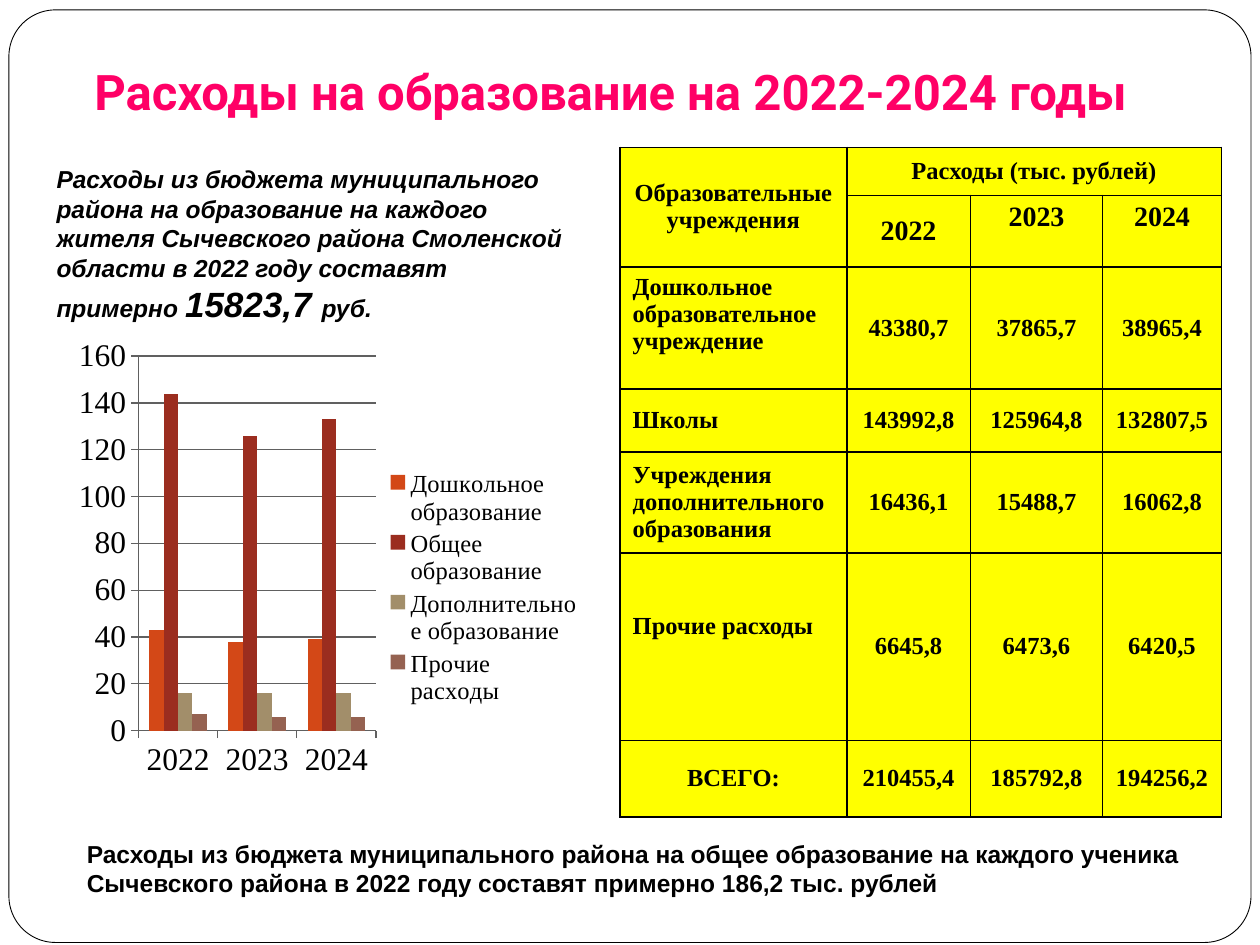
from lxml import etree
from pptx import Presentation
from pptx.chart.data import CategoryChartData
from pptx.dml.color import RGBColor
from pptx.enum import chart as ch, shapes, text
from pptx.oxml import parse_xml
from pptx.oxml.ns import nsdecls, qn
from pptx.util import Cm, Pt

BLACK = RGBColor(0, 0, 0)
WHITE = RGBColor(0xFF, 0xFF, 0xFF)
PINK = RGBColor(0xFF, 0, 0x66)
YELLOW = RGBColor(0xFF, 0xFF, 0)
GRAY = RGBColor(0x60, 0x60, 0x60)
SERIES_COLORS = [RGBColor(0xD3, 0x48, 0x17), RGBColor(0x9B, 0x2D, 0x1F),
                 RGBColor(0xA2, 0x8E, 0x6A), RGBColor(0x95, 0x62, 0x51)]
SERIF = "Times New Roman"
YEARS = ["2022", "2023", "2024"]


def add_text(box, anchor, font_name, color, runs, italic=False):
    """Add a bold one-paragraph text box; runs are (wording, size) pairs."""
    frame = slide.shapes.add_textbox(*(Cm(length) for length in box)).text_frame
    frame.word_wrap = True
    frame.vertical_anchor = anchor
    paragraph = frame.paragraphs[0]
    for wording, size in runs:
        run = paragraph.add_run()
        run.text = wording
        run.font.name, run.font.size = font_name, Pt(size)
        run.font.bold, run.font.italic = True, italic
        run.font.color.rgb = color
    return frame


def set_layout(parent, position, inner, x, y, w, h):
    """Place a chart part by hand, in fractions of the chart area."""
    for old in parent.findall(qn("c:layout")):
        parent.remove(old)
    target = '<c:layoutTarget val="inner"/>' if inner else ""
    parent.insert(position, parse_xml(
        f'<c:layout {nsdecls("c")}><c:manualLayout>{target}'
        '<c:xMode val="edge"/><c:yMode val="edge"/>'
        f'<c:x val="{x}"/><c:y val="{y}"/><c:w val="{w}"/><c:h val="{h}"/>'
        '</c:manualLayout></c:layout>'))


prs = Presentation()
prs.slide_width, prs.slide_height = Cm(25.4), Cm(19.05)
slide = prs.slides.add_slide(prs.slide_layouts[6])

# Frame around the slide
frame = slide.shapes.add_shape(shapes.MSO_SHAPE.ROUNDED_RECTANGLE,
                               Cm(0.18), Cm(0.2), Cm(25.04), Cm(18.8))
frame.adjustments[0] = 0.05
frame.shadow.inherit = False
frame.fill.solid()
frame.fill.fore_color.rgb = WHITE
frame.line.color.rgb = BLACK
frame.line.width = Pt(0.5)

# Title
title = add_text((0, 0.71, 24.61, 1.96), text.MSO_ANCHOR.BOTTOM, "Roboto", PINK,
                 [("Расходы на образование на 2022-2024 годы", 28)])
title.margin_bottom = Cm(0.25)
title.paragraphs[0].alignment = text.PP_ALIGN.CENTER

# Expenditure table
rows = [
    ["Образовательные учреждения", "Расходы (тыс. рублей)", "", ""],
    ["", *YEARS],
    ["Дошкольное образовательное учреждение", "43380,7", "37865,7", "38965,4"],
    ["Школы", "143992,8", "125964,8", "132807,5"],
    ["Учреждения\nдополнительного\nобразования", "16436,1", "15488,7", "16062,8"],
    ["Прочие расходы", "6645,8", "6473,6", "6420,5"],
    ["ВСЕГО:", "210455,4", "185792,8", "194256,2"],
]
column_widths = [4.57, 2.49, 2.67, 2.39]
row_heights = [0.97, 1.35, 2.46, 1.27, 1.89, 3.78, 1.54]
top_anchored = {(1, 2), (1, 3), (2, 0), (5, 0)}

table = slide.shapes.add_table(len(rows), len(column_widths), Cm(12.5), Cm(2.97),
                               Cm(sum(column_widths)), Cm(sum(row_heights))).table
for column, width in zip(table.columns, column_widths):
    column.width = Cm(width)
for row, height in zip(table.rows, row_heights):
    row.height = Cm(height)
table.cell(0, 0).merge(table.cell(1, 0))
table.cell(0, 1).merge(table.cell(0, 3))

for r, row in enumerate(rows):
    for c, wording in enumerate(row):
        cell = table.cell(r, c)
        properties = cell._tc.get_or_add_tcPr()
        for side in ("lnL", "lnR", "lnT", "lnB"):
            border = etree.SubElement(properties, qn(f"a:{side}"), w=str(Pt(1)))
            fill = etree.SubElement(border, qn("a:solidFill"))
            etree.SubElement(fill, qn("a:srgbClr"), val=str(BLACK))
        cell.fill.solid()
        cell.fill.fore_color.rgb = YELLOW
        cell.vertical_anchor = (text.MSO_ANCHOR.TOP if (r, c) in top_anchored
                                else text.MSO_ANCHOR.MIDDLE)
        if c:
            cell.margin_left = cell.margin_right = Cm(0.1)
        if not wording:
            continue
        cell.text_frame.text = wording
        is_label = c == 0 and 2 <= r <= 5
        for paragraph in cell.text_frame.paragraphs:
            paragraph.alignment = (text.PP_ALIGN.LEFT if is_label
                                   else text.PP_ALIGN.CENTER)
            font = paragraph.runs[0].font
            font.name, font.bold = SERIF, True
            font.size = Pt(16 if r == 1 else 14)
            font.color.rgb = BLACK
table.cell(5, 0).margin_top = Cm(1.2)

# Notes on spending per resident and per pupil
add_text((0.89, 3.12, 10.8, 3.61), text.MSO_ANCHOR.MIDDLE, "Arial", BLACK,
         [("Расходы из бюджета муниципального района на образование на каждого "
           "жителя Сычевского района Смоленской области в 2022 году составят "
           "примерно ", 14), ("15823,7 ", 20), ("руб.", 14)], italic=True)
add_text((1.5, 16.92, 22.86, 1.17), text.MSO_ANCHOR.MIDDLE, "Arial", BLACK,
         [("Расходы из бюджета муниципального района на общее образование на "
           "каждого ученика Сычевского района в 2022 году составят примерно "
           "186,2 тыс. рублей", 14)])

# Chart of spending by year
spending = CategoryChartData()
spending.categories = YEARS
spending.add_series("Дошкольное образование", [43, 38, 39])
spending.add_series("Общее образование", [144, 126, 133])
spending.add_series("Дополнительное образование", [16, 16, 16])
spending.add_series("Прочие расходы", [7, 6, 6])
chart = slide.shapes.add_chart(ch.XL_CHART_TYPE.COLUMN_CLUSTERED, Cm(0.79), Cm(6.55),
                               Cm(11.13), Cm(10.49), spending).chart
chart.has_title = False
chart.font.name, chart.font.size = SERIF, Pt(18)
chart.font.color.rgb = BLACK

plot = chart.plots[0]
plot.vary_by_categories = False
plot.gap_width, plot.overlap = 150, 0
for series, color in zip(plot.series, SERIES_COLORS):
    series.format.fill.solid()
    series.format.fill.fore_color.rgb = color

for axis in (chart.category_axis, chart.value_axis):
    axis.major_tick_mark = ch.XL_TICK_MARK.OUTSIDE
    axis.minor_tick_mark = ch.XL_TICK_MARK.NONE
    axis.format.line.color.rgb = GRAY
chart.value_axis.minimum_scale, chart.value_axis.maximum_scale = 0, 160
chart.value_axis.major_unit = 20
chart.value_axis.has_major_gridlines = True
chart.value_axis.major_gridlines.format.line.color.rgb = GRAY

chart.has_legend = True
legend = chart.legend
legend.position = ch.XL_LEGEND_POSITION.RIGHT
legend.include_in_layout = False
legend.font.name, legend.font.size = SERIF, Pt(14)
legend.font.color.rgb = BLACK
set_layout(chart._chartSpace.chart.plotArea, 0, True, 0.18, 0.06, 0.43, 0.72)
set_layout(legend._element, 1, False, 0.63, 0.27, 0.35, 0.47)

prs.save("out.pptx")
